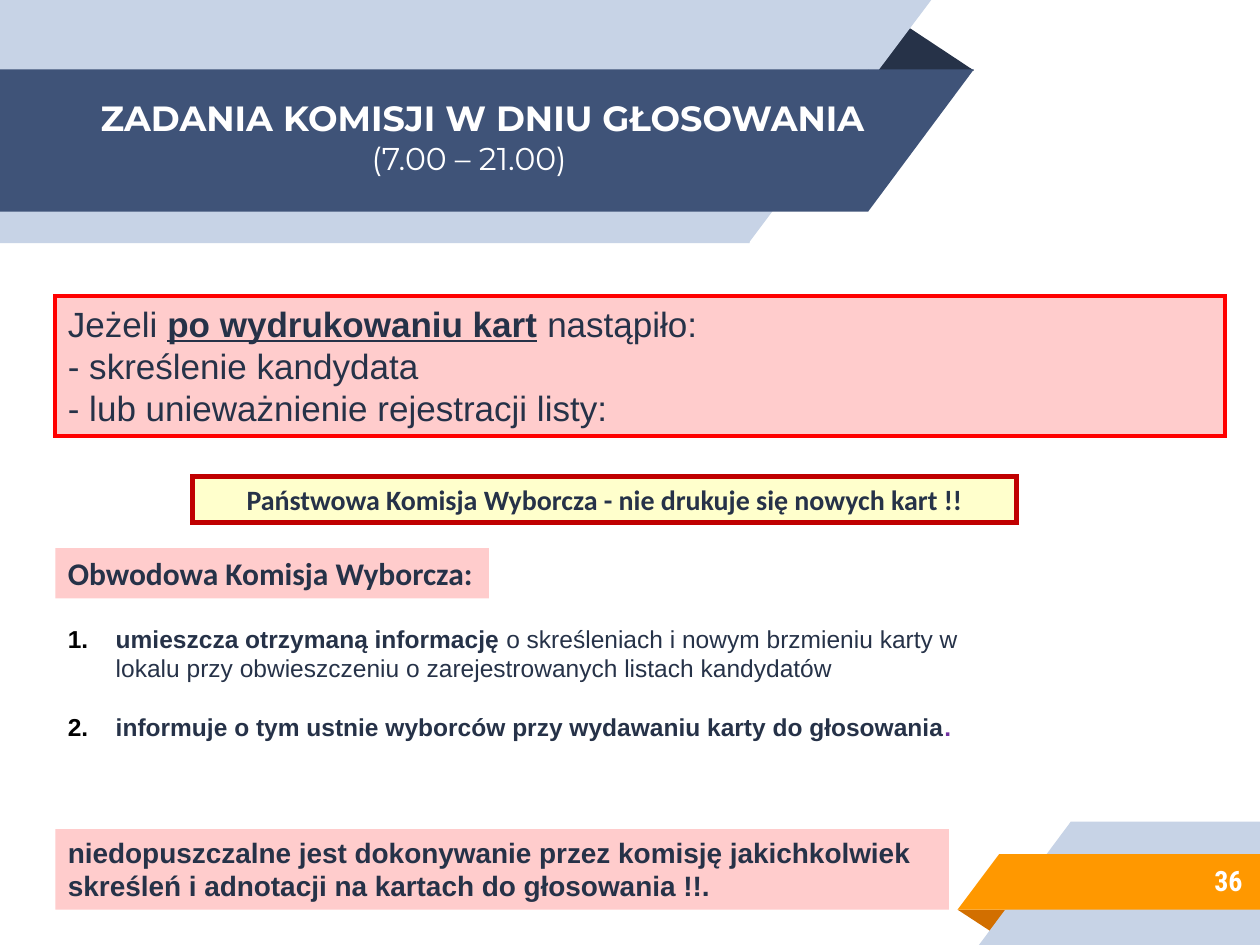
from dataclasses import dataclass, field
from typing import NamedTuple

from lxml.etree import SubElement
from pptx import Presentation
from pptx.dml.color import RGBColor
from pptx.enum.shapes import MSO_SHAPE as SHAPE
from pptx.enum.text import MSO_ANCHOR as ANCHOR, MSO_AUTO_SIZE as AUTO, PP_ALIGN as ALIGN
from pptx.oxml.ns import qn
from pptx.util import Inches, Pt

COLORS = {
    "navy": "263248", "blue": "3F5378", "pale": "C7D3E6", "rust": "D26F00",
    "orange": "FF9800", "white": "FFFFFF", "black": "000000", "pink": "FFCCCC",
    "cream": "FFFFCC", "red": "FF0000", "crimson": "C00000", "purple": "7030A0",
}
W, H = 10, 7.5
LEFT = 0.044 * W
HANG = 0.38


class Box(NamedTuple):
    x: float
    y: float
    w: float
    h: float


class Facet(NamedTuple):
    kind: SHAPE
    box: Box
    color: str
    rotation: int = 0
    flip: bool = True


@dataclass
class Run:
    text: str
    bold: bool = True
    underline: bool = False
    color: str = ""
    size: int = 0
    new_line: bool = False


@dataclass
class Para:
    runs: list[Run]
    align: ALIGN = ALIGN.LEFT
    indent: float = 0
    hang: float = 0
    number: int = 0
    before: float = 0


@dataclass
class Panel:
    box: Box
    font: str
    size: int
    paras: list[Para]
    color: str = "navy"
    fill: str = ""
    line: str = ""
    line_width: float = 0
    wrap: bool = True
    frame: dict = field(default_factory=lambda: {"auto_size": AUTO.SHAPE_TO_FIT_TEXT})


def rgb(name: str) -> RGBColor:
    return RGBColor.from_string(COLORS[name])


def apply(obj, values: dict) -> None:
    for name, value in values.items():
        setattr(obj, name, value)


def add_shape(s, kind: SHAPE, box: Box, fill: str):
    sp = s.shapes.add_shape(kind, *map(Inches, box))
    sp.shadow.inherit = False
    sp.fill.solid()
    sp.fill.fore_color.rgb = rgb(fill)
    sp.line.fill.background()
    return sp


def draw_facet(s, facet: Facet) -> None:
    sp = add_shape(s, facet.kind, facet.box, facet.color)
    sp.rotation = facet.rotation
    if facet.flip:
        sp._element.spPr.find(qn("a:xfrm")).set("flipH", "1")
    if facet.kind == SHAPE.ISOSCELES_TRIANGLE:
        sp.adjustments[0] = 0.324


def format_para(p, para: Para) -> None:
    apply(p, {"alignment": para.align, "space_before": Pt(para.before)})
    pPr = p._p.get_or_add_pPr()
    if para.indent or para.hang:
        pPr.set("marL", str(Inches(para.indent + para.hang)))
        pPr.set("indent", str(-Inches(para.hang)))
    if para.number:
        color = SubElement(pPr, qn("a:buClr"))
        SubElement(color, qn("a:srgbClr"), val=COLORS["black"])
        SubElement(pPr, qn("a:buFont"), typeface="+mj-lt")
        SubElement(pPr, qn("a:buAutoNum"), type="arabicPeriod", startAt=str(para.number))


def draw_panel(s, panel: Panel) -> None:
    if panel.fill:
        sp = add_shape(s, SHAPE.RECTANGLE, panel.box, panel.fill)
    else:
        sp = s.shapes.add_textbox(*map(Inches, panel.box))
    if panel.line:
        sp.line.color.rgb = rgb(panel.line)
        sp.line.width = Pt(panel.line_width)
        SubElement(sp._element.spPr.find(qn("a:ln")), qn("a:miter"), lim="800000")
    tf = sp.text_frame
    apply(tf, {"word_wrap": panel.wrap, "vertical_anchor": ANCHOR.TOP, **panel.frame})
    for i, para in enumerate(panel.paras):
        p = tf.add_paragraph() if i else tf.paragraphs[0]
        format_para(p, para)
        for run in para.runs:
            if run.new_line:
                p.add_line_break()
            r = p.add_run()
            r.text = run.text
            apply(r.font, {"name": panel.font, "size": Pt(run.size or panel.size),
                           "bold": run.bold, "underline": run.underline})
            r.font.color.rgb = rgb(run.color or panel.color)


TRI, RECT, RIGHT = SHAPE.ISOSCELES_TRIANGLE, SHAPE.RECTANGLE, SHAPE.RIGHT_TRIANGLE
FACETS = [
    Facet(TRI, Box(6.88, 0.18, 0.85, 0.38), "navy", flip=False),
    Facet(RECT, Box(-0.01, -0.01, 5.96, 1.94), "pale", 180),
    Facet(RIGHT, Box(5.94, 0, 1.45, 1.93), "pale", 180),
    Facet(RECT, Box(0, 0.55, 6.89, 1.13), "blue", 180),
    Facet(RIGHT, Box(6.89, 0.55, 0.84, 1.13), "blue", 180),
    Facet(TRI, Box(7.6, 7.22, 0.43, 0.19), "rust", 180, flip=False),
    Facet(RECT, Box(8.5, 6.52, 1.5, 0.98), "pale"),
    Facet(RIGHT, Box(7.77, 6.52, 0.73, 0.98), "pale"),
    Facet(RECT, Box(7.93, 6.78, 2.07, 0.44), "orange"),
    Facet(RIGHT, Box(7.6, 6.78, 0.33, 0.44), "orange"),
]
NUMBER_FRAME = {"vertical_anchor": ANCHOR.MIDDLE} | {
    f"margin_{side}": Inches(0.1) for side in ("left", "top", "right", "bottom")}

PANELS = [
    Panel(Box(0.7, 0.72, 9.21, 0.74), "Montserrat", 20, [
        Para([Run("ZADANIA KOMISJI W DNIU GŁOSOWANIA")]),
        Para([Run("(7.00 – 21.00)", bold=False, size=18)], indent=2.15),
    ], color="white"),
    Panel(Box(LEFT, 2.35, 9.28, 1.11), "Arial", 20, [
        Para([Run("Jeżeli ", bold=False), Run("po wydrukowaniu kart", underline=True),
              Run(" "), Run("nastąpiło:", bold=False),
              Run("- skreślenie kandydata", bold=False, new_line=True)]),
        Para([Run("- lub unieważnienie rejestracji listy:", bold=False)]),
    ], fill="pink", line="red", line_width=2.25),
    Panel(Box(1.53, 3.78, 6.54, 0.37), "Calibri", 16, [
        Para([Run("Państwowa Komisja Wyborcza - nie drukuje się nowych kart !!")], ALIGN.CENTER),
    ], fill="cream", line="crimson", line_width=3),
    Panel(Box(LEFT, 4.35, 3.44, 0.4), "Calibri", 18, [
        Para([Run("Obwodowa Komisja Wyborcza:")], hang=HANG),
    ], fill="pink", wrap=False),
    Panel(Box(LEFT, 4.9, 7.45, 1.04), "Arial", 14, [
        Para([Run("umieszcza otrzymaną informację "),
              Run("o skreśleniach i nowym brzmieniu karty w lokalu przy obwieszczeniu "
                  "o zarejestrowanych listach kandydatów", bold=False)],
             hang=HANG, number=1),
        Para([Run("informuje o tym ustnie wyborców przy wydawaniu karty do głosowania"),
              Run(".", color="purple")], hang=HANG, number=2, before=17),
    ]),
    Panel(Box(LEFT, 6.58, 7.09, 0.64), "Arial", 16, [
        Para([Run("niedopuszczalne jest dokonywanie przez komisję jakichkolwiek "
                  "skreśleń i adnotacji na kartach do głosowania !!.")]),
    ], fill="pink"),
    Panel(Box(8.33, 6.76, 1.63, 0.46), "Roboto Condensed", 16,
          [Para([Run("36")], ALIGN.RIGHT)], color="white", frame=NUMBER_FRAME),
]


def main() -> None:
    prs = Presentation()
    apply(prs, {"slide_width": Inches(W), "slide_height": Inches(H)})
    s = prs.slides.add_slide(prs.slide_layouts[6])
    for facet in FACETS:
        draw_facet(s, facet)
    for panel in PANELS:
        draw_panel(s, panel)
    prs.save("out.pptx")


if __name__ == "__main__":
    main()
